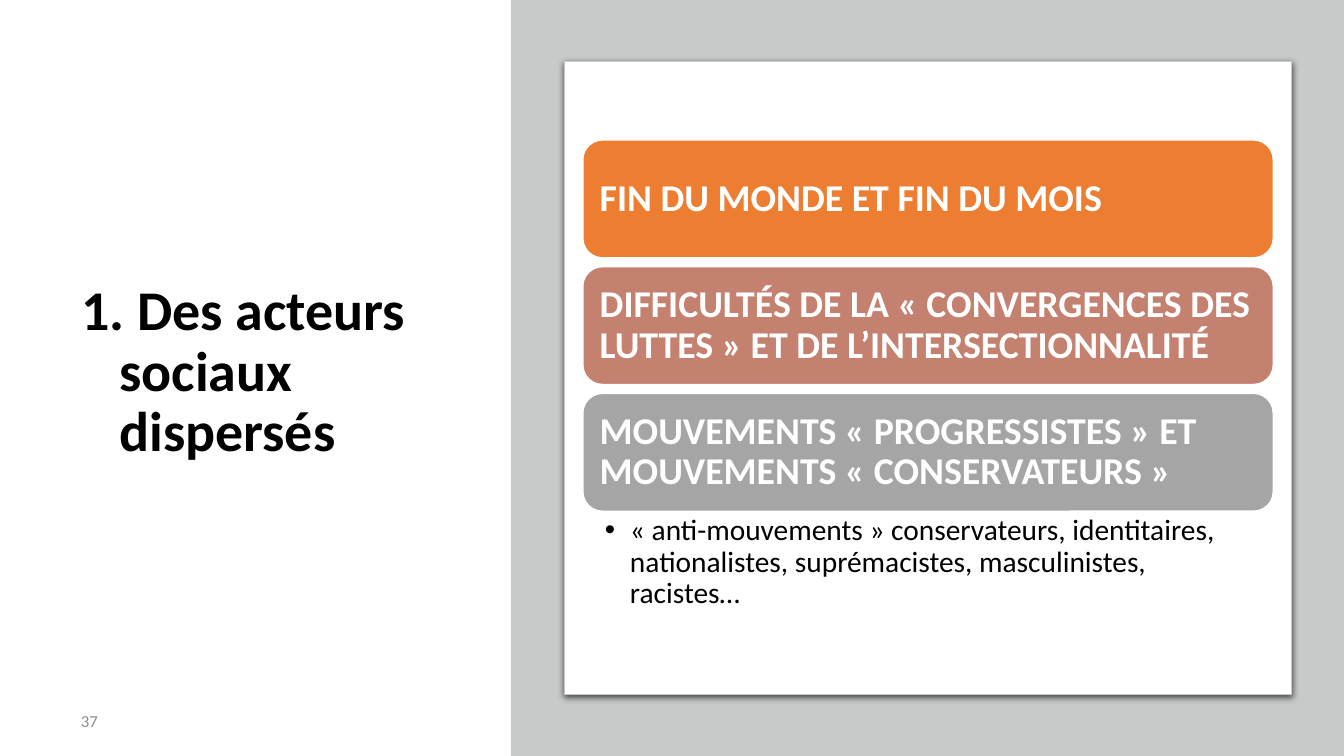
from lxml import etree
from pptx import Presentation
from pptx.dml.color import RGBColor
from pptx.enum.shapes import MSO_SHAPE
from pptx.enum.text import MSO_ANCHOR, MSO_AUTO_SIZE, PP_ALIGN
from pptx.oxml.ns import qn
from pptx.util import Pt

RECT, ROUNDED = MSO_SHAPE.RECTANGLE, MSO_SHAPE.ROUNDED_RECTANGLE
MIDDLE, TOP = MSO_ANCHOR.MIDDLE, MSO_ANCHOR.TOP
LEFT, RIGHT = PP_ALIGN.LEFT, PP_ALIGN.RIGHT
NO_FIT = MSO_AUTO_SIZE.NONE

TITLE = "1. Des acteurs sociaux dispersés"
THEMES = [
    ("FIN DU MONDE ET FIN DU MOIS", "ED7D31"),
    ("DIFFICULTÉS DE LA « CONVERGENCES DES LUTTES » ET DE L’INTERSECTIONNALITÉ", "C48170"),
    ("MOUVEMENTS « PROGRESSISTES » ET MOUVEMENTS « CONSERVATEURS »", "A5A5A5"),
]
DETAIL = ("« anti-mouvements » conservateurs, identitaires, nationalistes, "
          "suprémacistes, masculinistes, racistes…")
PAGE_NUMBER = "37"

FONT = "Calibri"
WHITE, BLACK, GREY, MUTED = "FFFFFF", "000000", "C8CACA", "8C8C8C"
SLIDE_W, SLIDE_H = 960, 540
BAND_LEFT = 365
THEME_LEFT, THEME_TOP, THEME_W, THEME_H = 416.3, 100, 493.2, 84.2
THEME_STEP = 90.5


def color(hex_code):
    return RGBColor.from_string(hex_code)


def set_all(target, values):
    for attribute, value in values.items():
        setattr(target, attribute, value)


def place(shape, left, top, width, height):
    set_all(shape, {"left": Pt(left), "top": Pt(top),
                    "width": Pt(width), "height": Pt(height)})


def write(shape, text, size, ink, bold=False, anchor=MIDDLE, align=LEFT,
          insets=(7.2, 3.6, 7.2, 3.6), hanging=0, after=0, spacing=0.9):
    """Fill a shape with one formatted paragraph; insets run left, top, right, bottom."""
    frame = shape.text_frame
    left, top, right, bottom = map(Pt, insets)
    set_all(frame, {"text": text, "word_wrap": True, "auto_size": NO_FIT,
                    "vertical_anchor": anchor, "margin_left": left,
                    "margin_top": top, "margin_right": right, "margin_bottom": bottom})
    paragraph = frame.paragraphs[0]
    set_all(paragraph, {"alignment": align, "line_spacing": spacing,
                        "space_before": Pt(0), "space_after": Pt(after)})
    if hanging:
        properties = paragraph._p.get_or_add_pPr()
        properties.set("marL", str(Pt(hanging)))
        properties.set("indent", str(-Pt(hanging)))
    font = paragraph.runs[0].font
    set_all(font, {"name": FONT, "size": Pt(size), "bold": bold})
    font.color.rgb = color(ink)


def add_panel(slide, preset, bounds, fill, line=None, line_width=1):
    panel = slide.shapes.add_shape(preset, *map(Pt, bounds))
    panel.shadow.inherit = False
    panel.fill.solid()
    panel.fill.fore_color.rgb = color(fill)
    if line:
        panel.line.color.rgb = color(line)
        panel.line.width = Pt(line_width)
    else:
        panel.line.fill.background()
    return panel


def add_drop_shadow(shape):
    effects = shape._element.spPr.find(qn("a:effectLst"))
    shadow = etree.SubElement(effects, qn("a:outerShdw"), blurRad=str(Pt(4.5)),
                              dist=str(Pt(1.5)), dir="5400000", algn="t", rotWithShape="0")
    tint = etree.SubElement(shadow, qn("a:srgbClr"), val=BLACK)
    etree.SubElement(tint, qn("a:alpha"), val="63000")


def main():
    deck = Presentation()
    set_all(deck, {"slide_width": Pt(SLIDE_W), "slide_height": Pt(SLIDE_H)})
    slide = deck.slides.add_slide(deck.slide_layouts[1])
    title, detail = slide.placeholders

    place(title, 51, 49.7, 289, 433.4)
    write(title, TITLE, 40, BLACK, bold=True, hanging=27)

    add_panel(slide, RECT, (BAND_LEFT, 0, SLIDE_W - BAND_LEFT, SLIDE_H), GREY)
    card = add_panel(slide, ROUNDED, (403, 44, 519.5, 452), WHITE, GREY, 0.75)
    card.adjustments[0] = 0
    add_drop_shadow(card)

    number = slide.shapes.add_textbox(Pt(23), Pt(500.5), Pt(54), Pt(28.8))
    write(number, PAGE_NUMBER, 12, MUTED, align=RIGHT, after=6, spacing=1)

    for row, (theme, fill) in enumerate(THEMES):
        top = THEME_TOP + row * THEME_STEP
        box = add_panel(slide, ROUNDED, (THEME_LEFT, top, THEME_W, THEME_H), fill, WHITE)
        write(box, theme, 27, WHITE, bold=True, insets=(8, 8, 8, 8))

    place(detail, THEME_LEFT, top + THEME_H, THEME_W, 75)
    write(detail, DETAIL, 21, BLACK, anchor=TOP, insets=(15.7, 2.7, 15, 2.7),
          hanging=18, after=4)
    slide.shapes._spTree.append(detail._element)  # bring the list in front of the card

    deck.save("out.pptx")


if __name__ == "__main__":
    main()
